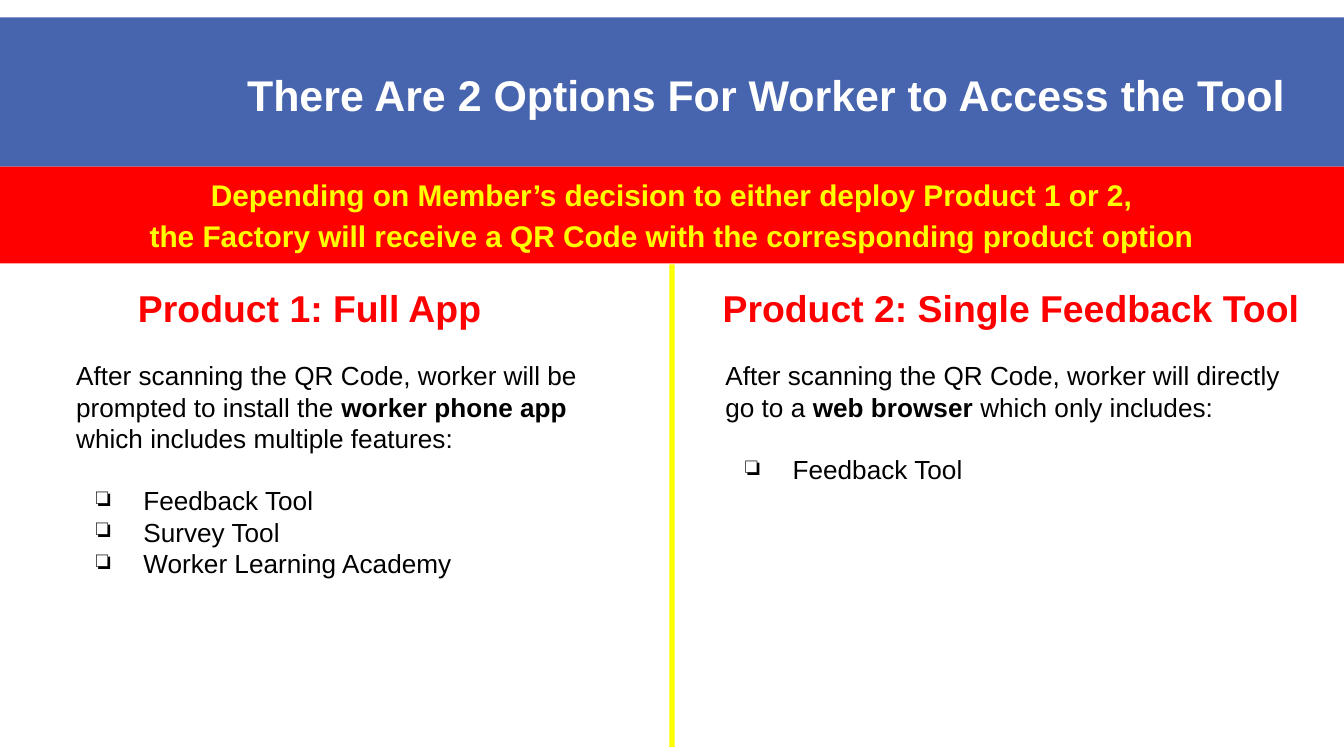
from lxml import etree
from pptx import Presentation
from pptx.dml.color import RGBColor
from pptx.enum.shapes import MSO_SHAPE
from pptx.enum.text import MSO_ANCHOR, PP_ALIGN
from pptx.oxml.ns import qn
from pptx.util import Cm, Pt

RECT = MSO_SHAPE.RECTANGLE
MIDDLE, TOP = MSO_ANCHOR.MIDDLE, MSO_ANCHOR.TOP
LEFT, CENTER = PP_ALIGN.LEFT, PP_ALIGN.CENTER

BLUE = RGBColor(0x47, 0x64, 0xAE)
RED = RGBColor(0xFF, 0x00, 0x00)
YELLOW = RGBColor(0xFF, 0xFF, 0x00)
WHITE = RGBColor(0xFF, 0xFF, 0xFF)
BLACK = RGBColor(0x00, 0x00, 0x00)

WIDE, HIGH = 25.4, 14.29
HEAD_TOP, BODY_TOP = 5.26, 6.55

BANNER = [
    "Depending on Member’s decision to either deploy Product 1 or 2,",
    "the Factory will receive a QR Code with the corresponding product option",
]
# Heading, its left and width; body runs (text, bold), left, width, height; tools
OPTIONS = [
    ("Product 1: Full App", 0.76, 10.19,
     [("After scanning the QR Code, worker will be prompted to install the ", False),
      ("worker phone app ", True),
      ("which includes multiple features:", False)],
     1.19, 10.97, 6.5,
     ["Feedback Tool", "Survey Tool", "Worker Learning Academy"]),
    ("Product 2: Single Feedback Tool", 12.8, 12.62,
     [("After scanning the QR Code, worker will directly go to a ", False),
      ("web browser ", True),
      ("which only includes:", False)],
     13.46, 11.05, 2.9,
     ["Feedback Tool"]),
]


def style(font, size, color, bold=False):
    look = {"name": "Arial", "size": Pt(size), "bold": bold}
    for key, value in look.items():
        setattr(font, key, value)
    font.color.rgb = color


def set_frame(frame, anchor, pad=0.13):
    look = {"word_wrap": True, "vertical_anchor": anchor,
            "margin_left": Cm(0.25), "margin_right": Cm(0.25),
            "margin_top": Cm(pad), "margin_bottom": Cm(pad)}
    for key, value in look.items():
        setattr(frame, key, value)


def add_para(frame, runs, size, color, align=LEFT, first=False):
    para = frame.paragraphs[0] if first else frame.add_paragraph()
    para.alignment = align
    for text, bold in runs:
        run = para.add_run()
        run.text = text
        style(run.font, size, color, bold)
    return para


def add_bar(slide, left, top, width, height, color):
    bar = slide.shapes.add_shape(RECT, Cm(left), Cm(top), Cm(width), Cm(height))
    bar.shadow.inherit = False
    bar.fill.solid()
    bar.fill.fore_color.rgb = color
    bar.line.fill.background()
    return bar


def add_box(slide, left, top, width, height, pad=0.13):
    box = slide.shapes.add_textbox(Cm(left), Cm(top), Cm(width), Cm(height))
    set_frame(box.text_frame, TOP, pad)
    return box.text_frame


def add_bullet(para):
    props = para._p.get_or_add_pPr()
    props.set("marL", str(Cm(1.27)))
    props.set("indent", str(-Cm(0.89)))
    tint = etree.SubElement(props, qn("a:buClr"))
    etree.SubElement(tint, qn("a:srgbClr"), val=str(BLACK))
    etree.SubElement(props, qn("a:buChar"), char="❏")


def set_title(slide):
    title = slide.shapes.title
    place = {"left": Cm(4.42), "top": Cm(0.58), "width": Cm(20.85), "height": Cm(2.39)}
    for key, value in place.items():
        setattr(title, key, value)
    set_frame(title.text_frame, MIDDLE)
    text = "There Are 2 Options For Worker to Access the Tool"
    add_para(title.text_frame, [(text, True)], 23, WHITE, first=True)


def add_banner(slide):
    frame = add_bar(slide, 0, 3.15, WIDE, 1.83, RED).text_frame
    set_frame(frame, MIDDLE)
    for row, line in enumerate(BANNER):
        para = add_para(frame, [(line, True)], 16, YELLOW, CENTER, row == 0)
        if row:
            para.space_before = Pt(3.2)


def add_option(slide, head, head_left, head_wide, intro, left, width, height, tools):
    frame = add_box(slide, head_left, HEAD_TOP, head_wide, 1.12)
    add_para(frame, [(head, True)], 20, RED, CENTER, True)

    frame = add_box(slide, left, BODY_TOP, width, height, 0.25)
    add_para(frame, intro, 14, BLACK, first=True)
    for row, tool in enumerate(tools):
        para = add_para(frame, [(tool, False)], 14, BLACK)
        add_bullet(para)
        if row == 0:
            para.space_before = Pt(16.5)


def main():
    deck = Presentation()
    deck.slide_width, deck.slide_height = Cm(WIDE), Cm(HIGH)
    slide = deck.slides.add_slide(deck.slide_layouts[5])

    # Title band, moved behind the title
    band = add_bar(slide, 0, 0.33, WIDE, 2.82, BLUE)
    slide.shapes._spTree.insert(2, band._element)
    set_title(slide)

    # Banner and divider
    add_banner(slide)
    add_bar(slide, 12.65, 5, 0.1, 9.12, YELLOW)

    # Two product columns
    for option in OPTIONS:
        add_option(slide, *option)

    deck.save("out.pptx")


if __name__ == "__main__":
    main()
